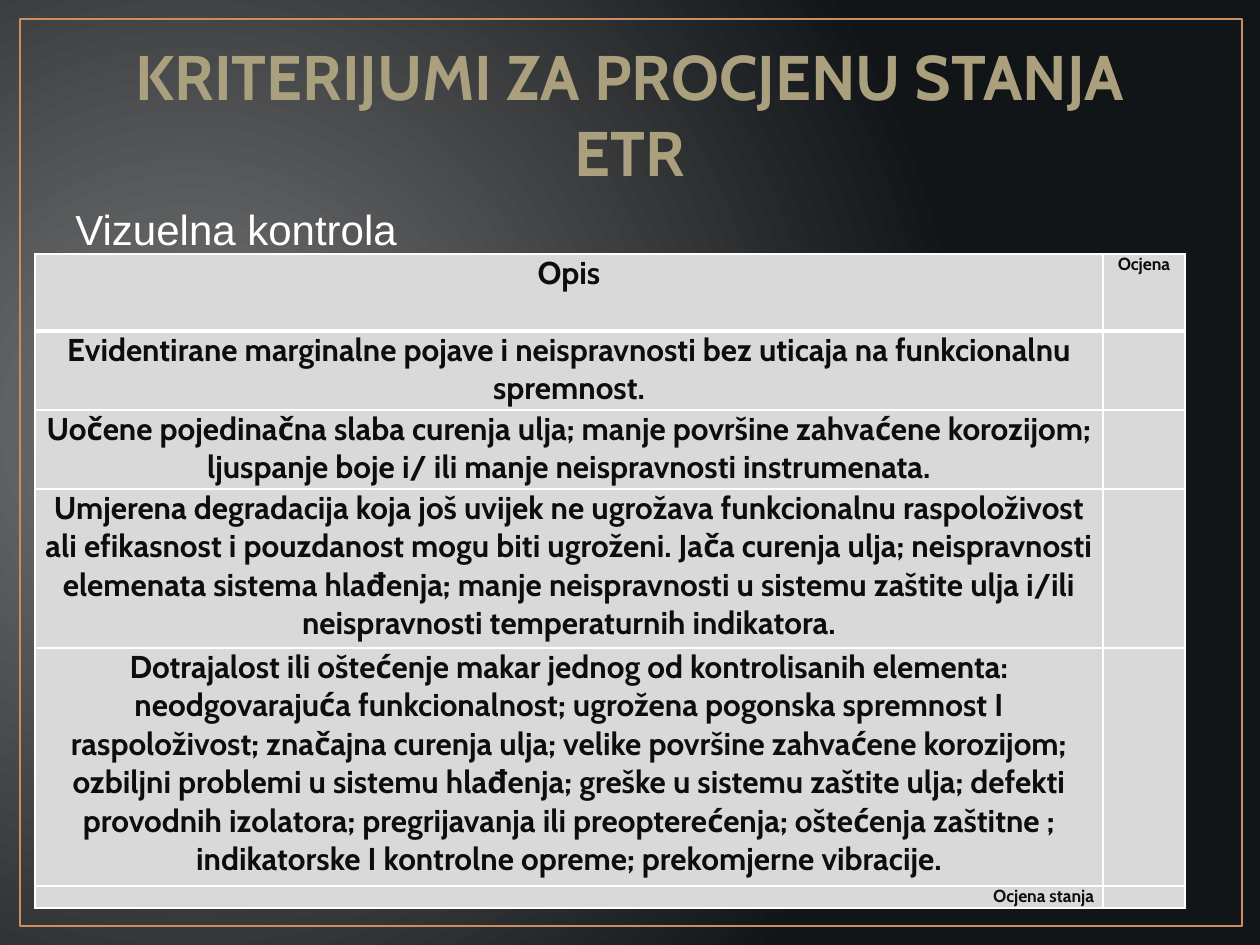
from lxml import etree
from pptx import Presentation
from pptx import util as u
from pptx.dml.color import RGBColor
from pptx.enum import shapes, text
from pptx.oxml import parse_xml
from pptx.oxml.ns import nsdecls, qn

PX = 914400 // 126
WHITE, INK, PANEL = "FFFFFF", "0D0D0D", "D9D9D9"
CENTER, RIGHT, LEFT = text.PP_ALIGN.CENTER, text.PP_ALIGN.RIGHT, text.PP_ALIGN.LEFT

CRITERIA = [
    ("Opis", "Ocjena", 77),
    ("Evidentirane marginalne pojave i neispravnosti bez uticaja na funkcionalnu spremnost.", "", 79),
    ("Uočene pojedinačna slaba curenja ulja; manje površine zahvaćene korozijom; "
     "ljuspanje boje i/ ili manje neispravnosti instrumenata.", "", 79),
    ("Umjerena degradacija koja još uvijek ne ugrožava funkcionalnu raspoloživost "
     "ali efikasnost i pouzdanost mogu biti ugroženi. Jača curenja ulja; neispravnosti "
     "elemenata sistema hlađenja; manje neispravnosti u sistemu zaštite ulja i/ili "
     "neispravnosti temperaturnih indikatora.", "", 159),
    ("Dotrajalost ili oštećenje makar jednog od kontrolisanih elementa: "
     "neodgovarajuća funkcionalnost; ugrožena pogonska spremnost I "
     "raspoloživost; značajna curenja ulja; velike površine zahvaćene korozijom; "
     "ozbiljni problemi u sistemu hlađenja; greške u sistemu zaštite ulja; defekti "
     "provodnih izolatora; pregrijavanja ili preopterećenja; oštećenja zaštitne ; "
     "indikatorske I kontrolne opreme; prekomjerne vibracije.", "", 238),
    ("Ocjena stanja", "", 22),
]


def px(*lengths):
    return [length * PX for length in lengths]


def color(value):
    return RGBColor.from_string(value)


def apply(target, values):
    for name, value in values.items():
        setattr(target, name, value)


def write(frame, words, size, font, ink, align, bold=False):
    paragraph = frame.paragraphs[0]
    paragraph.alignment = align
    if not words:
        etree.SubElement(paragraph._p, qn("a:endParaRPr"), sz=str(size * 100))
        return
    run = paragraph.add_run()
    run.text = words
    apply(run.font, {"size": u.Pt(size), "name": font, "bold": bold})
    run.font.color.rgb = color(ink)


def paint_background(slide):
    slide.background.fill.solid()
    properties = slide.background._cSld.find(qn("p:bg")).find(qn("p:bgPr"))
    glow = parse_xml(
        f'<a:gradFill {nsdecls("a")} rotWithShape="1"><a:gsLst>'
        '<a:gs pos="0"><a:srgbClr val="767777"/></a:gs>'
        '<a:gs pos="100000"><a:srgbClr val="121518"/></a:gs></a:gsLst>'
        '<a:path path="circle"><a:fillToRect l="15000" t="50000" r="85000" b="60000"/>'
        '</a:path></a:gradFill>')
    properties.replace(properties.find(qn("a:solidFill")), glow)


def draw_frame(slide, box):
    frame = slide.shapes.add_shape(shapes.MSO_SHAPE.RECTANGLE, *px(*box))
    frame.shadow.inherit = False
    frame.fill.background()
    frame.line.color.rgb = color("CC8E60")
    frame.line.width = u.Pt(1.5)


def add_heading(slide, box, words, layout, **style):
    frame = slide.shapes.add_textbox(*px(*box)).text_frame
    apply(frame, {"word_wrap": True, **layout})
    write(frame, words, **style)


def add_border(cell, side, points):
    line = parse_xml(
        f'<a:{side} {nsdecls("a")} w="{u.Pt(points)}"><a:solidFill>'
        f'<a:srgbClr val="{WHITE}"/></a:solidFill></a:{side}>')
    properties = cell._tc.get_or_add_tcPr()
    properties.insert(len(properties) - 1, line)


def fill_cell(cell, words, size, align, row):
    gap = 9 * PX
    apply(cell, {"margin_left": gap, "margin_right": gap, "margin_top": 0, "margin_bottom": 0})
    cell.fill.solid()
    cell.fill.fore_color.rgb = color(PANEL)
    write(cell.text_frame, words, size, "Cabin", INK, align, True)
    top, bottom = (3 if row == 1 else 1), (3 if row == 0 else 1)
    for side, points in (("lnL", 1), ("lnR", 1), ("lnT", top), ("lnB", bottom)):
        add_border(cell, side, points)


def add_criteria(slide, box):
    table = slide.shapes.add_table(len(CRITERIA), 2, *px(*box)).table
    apply(table, {"first_row": False, "horz_banding": False})
    score_width = 82
    table.columns[0].width, table.columns[1].width = px(box[2] - score_width, score_width)
    last = len(CRITERIA) - 1
    for row, (description, score, height) in enumerate(CRITERIA):
        table.rows[row].height = height * PX
        size, align = (10, RIGHT) if row == last else (18, CENTER)
        fill_cell(table.cell(row, 0), description, size, align, row)
        fill_cell(table.cell(row, 1), score, 10, CENTER, row)


def main():
    deck = Presentation()
    deck.slide_width, deck.slide_height = u.Inches(10), u.Inches(7.5)
    slide = deck.slides.add_slide(deck.slide_layouts[6])
    paint_background(slide)
    draw_frame(slide, (20, 19, 1222, 907))
    add_heading(slide, (63, 38, 1134, 157), "KRITERIJUMI ZA PROCJENU STANJA ETR",
                {"vertical_anchor": text.MSO_ANCHOR.BOTTOM},
                size=36, font="Cabin", ink="AAA07D", align=CENTER, bold=True)
    add_criteria(slide, (35, 254, 1150, sum(height for *_, height in CRITERIA)))
    add_heading(slide, (63, 193, 449, 102), "Vizuelna kontrola",
                {"vertical_anchor": text.MSO_ANCHOR.TOP, "margin_top": 10 * PX},
                size=24, font="Arial", ink=WHITE, align=LEFT)
    deck.save("out.pptx")


if __name__ == "__main__":
    main()
